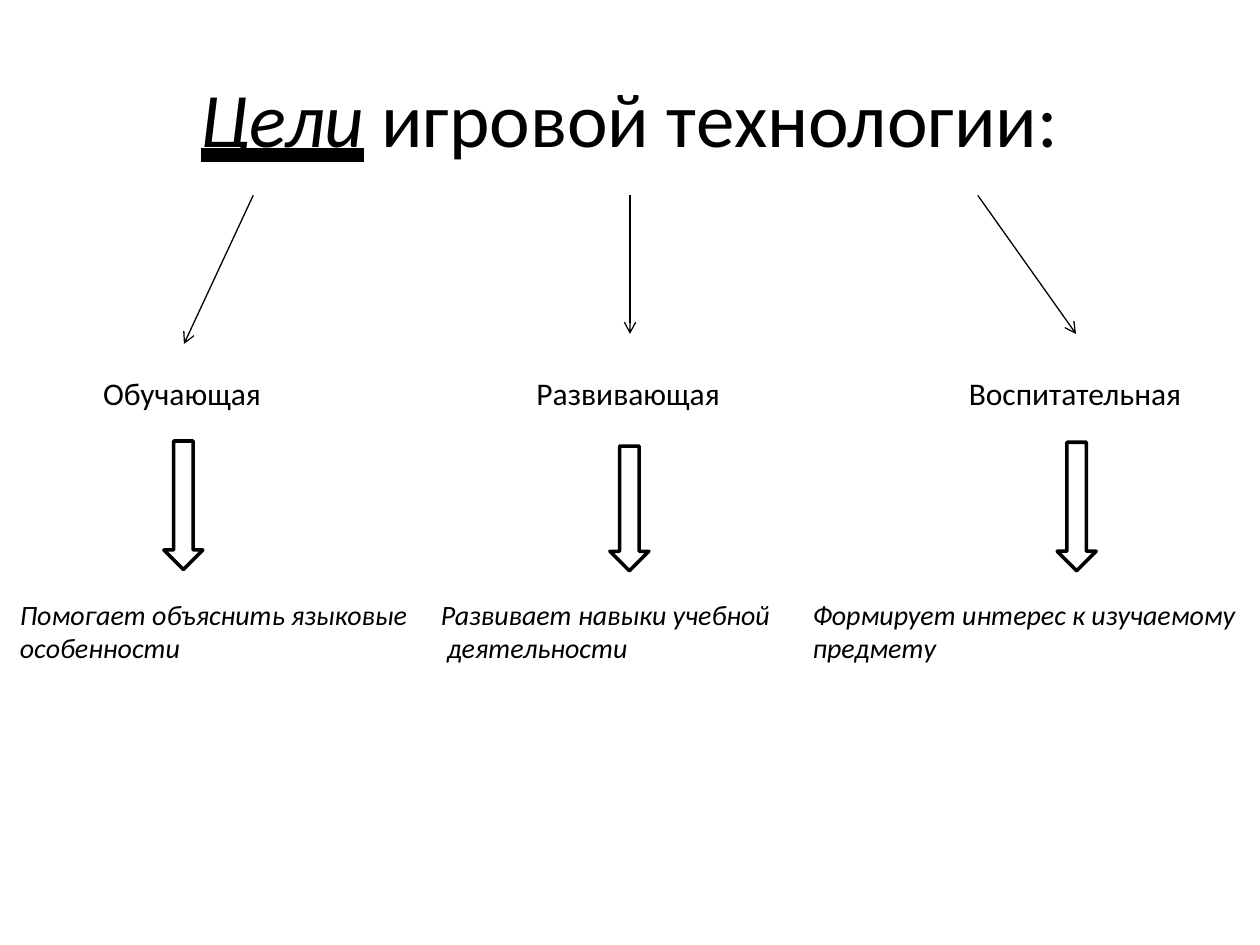
from pptx import Presentation
from pptx.dml.color import RGBColor
from pptx.enum.shapes import MSO_CONNECTOR, MSO_SHAPE
from pptx.enum.text import MSO_ANCHOR, MSO_AUTO_SIZE, MSO_UNDERLINE, PP_ALIGN
from pptx.oxml.ns import qn
from pptx.util import Inches, Pt
from lxml.etree import SubElement


def color(hex_value):
    return RGBColor.from_string(hex_value)


def add_text(box, lines, size, italic=False, wrap=False):
    """Add a text box at box (left, top, width, height), one paragraph per line."""
    tf = s.shapes.add_textbox(*map(Inches, box)).text_frame
    tf.word_wrap = wrap
    tf.auto_size = MSO_AUTO_SIZE.SHAPE_TO_FIT_TEXT
    tf.text = "\n".join(lines)
    for p in tf.paragraphs:
        for r in p.runs:
            r.font.name = "Calibri"
            r.font.size = Pt(size)
            r.font.italic = italic
            r.font.color.rgb = color("000000")
    return tf


prs = Presentation()
prs.slide_width, prs.slide_height = Inches(10), Inches(7.5)
s = prs.slides.add_slide(prs.slide_layouts[6])

# Title
tf = add_text((0.5, 0.3, 9, 1.25), ["Цели"], 44, italic=True, wrap=True)
tf.auto_size = MSO_AUTO_SIZE.NONE
tf.vertical_anchor = MSO_ANCHOR.MIDDLE
p = tf.paragraphs[0]
p.alignment = PP_ALIGN.CENTER
p.runs[0].font.underline = MSO_UNDERLINE.HEAVY_LINE
r = p.add_run()
r.text = " игровой технологии:"
r.font.name = "Calibri"
r.font.size = Pt(44)
r.font.color.rgb = color("000000")

# Thin arrows from the title: start x, end x, end y
for x1, x2, y2 in [(2.01, 1.46, 2.73), (5, 5, 2.65), (7.76, 8.54, 2.65)]:
    line = s.shapes.add_connector(
        MSO_CONNECTOR.STRAIGHT, Inches(x1), Inches(1.55), Inches(x2), Inches(y2))
    line.line.color.rgb = color("000000")
    line.line.width = Pt(0.75)
    SubElement(line.line._get_or_add_ln(), qn("a:tailEnd"), type="arrow")
    SubElement(line._element.spPr, qn("a:effectLst"))

# Goal names: left, width
for name, left, width in [("Обучающая", 0.72, 1.47),
                          ("Развивающая", 4.16, 1.67),
                          ("Воспитательная", 7.59, 1.91)]:
    add_text((left, 2.92, width, 0.4), [name], 18)

# Block arrows: left, top, height
for left, top, height in [(1.3, 3.5, 1.02), (4.84, 3.54, 0.99), (8.39, 3.51, 1.02)]:
    sp = s.shapes.add_shape(MSO_SHAPE.DOWN_ARROW, Inches(left), Inches(top),
                            Inches(0.31), Inches(height))
    sp.shadow.inherit = False
    sp.fill.solid()
    sp.fill.fore_color.rgb = color("FFFFFF")
    sp.line.color.rgb = color("000000")
    sp.line.width = Pt(2)

# Goal descriptions: lines, left, width, wrap
for lines, left, width, wrap in [
    (["Помогает объяснить языковые особенности"], 0.06, 3.37, True),
    (["Развивает навыки учебной", " деятельности"], 3.4, 2.84, False),
    (["Формирует интерес к изучаемому", "предмету"], 6.35, 3.65, False),
]:
    add_text((left, 4.69, width, 0.64), lines, 16, italic=True, wrap=wrap)

prs.save("out.pptx")
